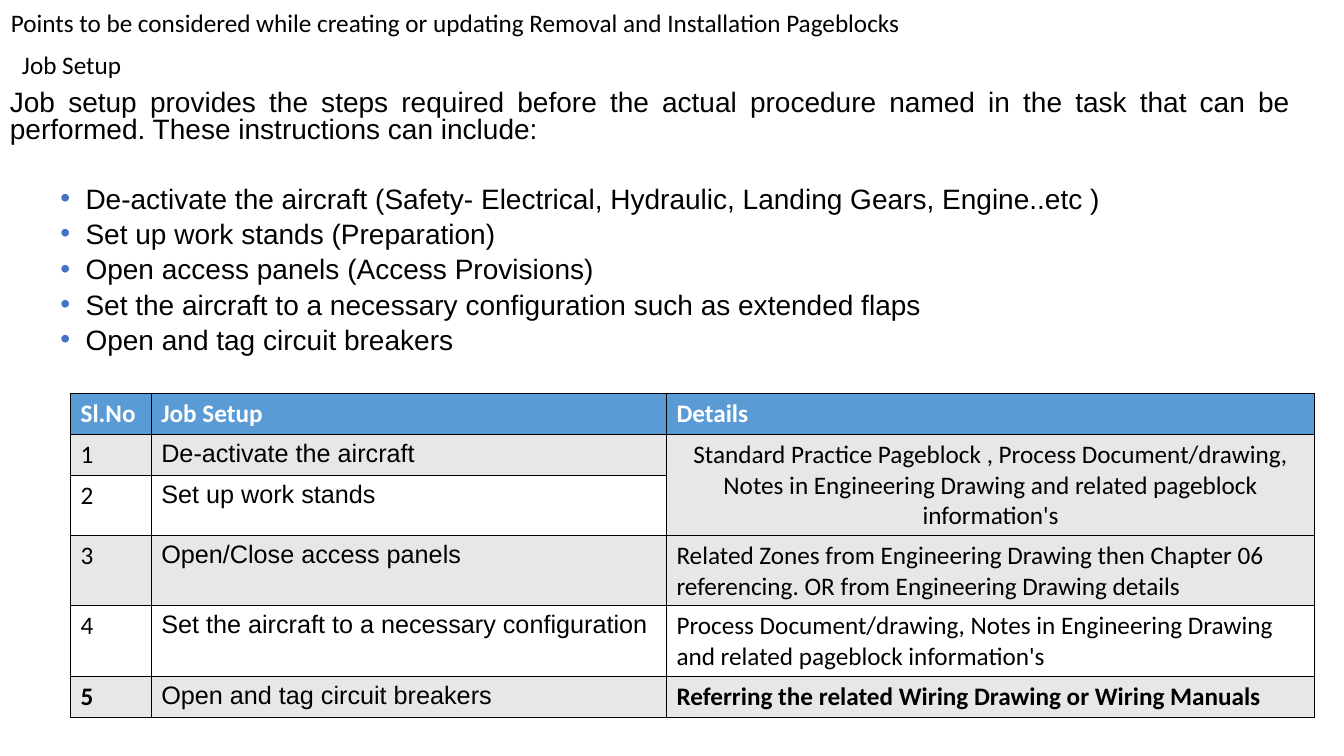
from lxml import etree
from pptx import Presentation
from pptx.dml.color import RGBColor
from pptx.enum.text import PP_ALIGN
from pptx.oxml.ns import qn
from pptx.util import Inches, Pt

JUSTIFY, CENTER, LEFT = PP_ALIGN.JUSTIFY, PP_ALIGN.CENTER, PP_ALIGN.LEFT
BLACK = RGBColor(0x00, 0x00, 0x00)
WHITE = RGBColor(0xFF, 0xFF, 0xFF)
HEADER_BLUE = RGBColor(0x5B, 0x9B, 0xD5)
BAND_GRAY = RGBColor(0xE7, 0xE7, 0xE7)
BULLET_BLUE = RGBColor(0x44, 0x72, 0xC4)

# Content
TITLE = "Points to be considered while creating or updating Removal and Installation Pageblocks"
SUBTITLE = "Job Setup"
INTRODUCTION = (
    "Job setup provides the steps required before the actual procedure named "
    "in the task that can be performed. These instructions can include:"
)
STEPS = [
    "De-activate the aircraft (Safety- Electrical, Hydraulic, Landing Gears, Engine..etc )",
    "Set up work stands (Preparation)",
    "Open access panels (Access Provisions)",
    "Set the aircraft to a necessary configuration such as extended flaps",
    "Open and tag circuit breakers",
]
TABLE_ROWS = [
    ("Sl.No", "Job Setup", "Details"),
    ("1", "De-activate the aircraft",
     "Standard Practice Pageblock , Process Document/drawing, "
     "Notes in Engineering Drawing and related pageblock information's"),
    ("2", "Set up work stands", ""),
    ("3", "Open/Close access panels",
     "Related Zones from Engineering Drawing then Chapter 06 referencing. "
     "OR from Engineering Drawing details"),
    ("4", "Set the aircraft to a necessary configuration",
     "Process Document/drawing, Notes in Engineering Drawing "
     "and related pageblock information's"),
    ("5", "Open and tag circuit breakers",
     "Referring the related Wiring Drawing or Wiring Manuals"),
]
COLUMN_WIDTHS = (0.8, 5.11, 6.43)
ROW_HEIGHTS = (0.41, 0.41, 0.59, 0.7, 0.7, 0.41)
LAST_ROW = len(TABLE_ROWS) - 1


def style(paragraph, font_name, size, color=BLACK, bold=False):
    font = paragraph.font
    for run in paragraph.runs:
        font = run.font
        font.name, font.size, font.bold = font_name, Pt(size), bold
        font.color.rgb = color


def add_text_box(slide, left, top, width, height, text, wrap=True):
    box = slide.shapes.add_textbox(*map(Inches, (left, top, width, height)))
    box.text_frame.word_wrap = wrap
    box.text_frame.text = text
    return box.text_frame


def add_bullet(paragraph):
    properties = paragraph._p.get_or_add_pPr()
    properties.set("marL", str(Inches(0.75)))
    properties.set("indent", str(Inches(-0.25)))
    color = etree.SubElement(properties, qn("a:buClr"))
    etree.SubElement(color, qn("a:srgbClr"), val=str(BULLET_BLUE))
    etree.SubElement(properties, qn("a:buFont"), typeface="Arial")
    etree.SubElement(properties, qn("a:buChar"), char="•")


def add_borders(cell):
    properties = cell._tc.get_or_add_tcPr()
    for position, side in enumerate(("a:lnL", "a:lnR", "a:lnT", "a:lnB")):
        line = etree.Element(qn(side), w=str(Pt(1)))
        fill = etree.SubElement(line, qn("a:solidFill"))
        etree.SubElement(fill, qn("a:srgbClr"), val=str(BLACK))
        properties.insert(position, line)


def add_job_table(slide):
    frame = slide.shapes.add_table(
        len(TABLE_ROWS), len(COLUMN_WIDTHS), Inches(0.7), Inches(3.9),
        Inches(sum(COLUMN_WIDTHS)), Inches(sum(ROW_HEIGHTS)))
    table = frame.table
    for column, width in zip(table.columns, COLUMN_WIDTHS):
        column.width = Inches(width)
    for row, height in zip(table.rows, ROW_HEIGHTS):
        row.height = Inches(height)

    for row_index, texts in enumerate(TABLE_ROWS):
        is_header = row_index == 0
        band = HEADER_BLUE if is_header else BAND_GRAY if row_index % 2 else WHITE
        for column_index, text in enumerate(texts):
            cell = table.cell(row_index, column_index)
            cell.fill.solid()
            cell.fill.fore_color.rgb = band
            add_borders(cell)
            cell.text_frame.text = text
            is_job = column_index == 1 and not is_header
            paragraph = cell.text_frame.paragraphs[0]
            paragraph.alignment = CENTER if (row_index, column_index) == (1, 2) else LEFT
            style(paragraph, "Arial" if is_job else "Calibri", 18,
                  WHITE if is_header else BLACK,
                  is_header or (row_index == LAST_ROW and not is_job))
    # The first two jobs share their details
    table.cell(1, 2).merge(table.cell(2, 2))


def main():
    presentation = Presentation()
    presentation.slide_width, presentation.slide_height = Inches(13.33), Inches(7.5)
    slide = presentation.slides.add_slide(presentation.slide_layouts[6])

    # Headings
    title = add_text_box(slide, 0.01, 0.02, 9.13, 0.4, TITLE, wrap=False)
    subtitle = add_text_box(slide, 0.12, 0.44, 6.67, 0.4, SUBTITLE)
    for heading in (title, subtitle):
        style(heading.paragraphs[0], "Calibri", 18)

    # Introduction and bulleted steps
    body = add_text_box(slide, 0, 0.85, 12.9, 2.76, INTRODUCTION)
    for index, step in enumerate(STEPS):
        paragraph = body.add_paragraph()
        paragraph.text = step
        paragraph.level = 1
        add_bullet(paragraph)
        paragraph.space_before = Pt(6 if index else 31)
    for paragraph in body.paragraphs:
        paragraph.alignment = JUSTIFY
        paragraph.line_spacing = 0.8
        style(paragraph, "Arial", 20)

    # Job setup table
    add_job_table(slide)
    presentation.save("out.pptx")


if __name__ == "__main__":
    main()
